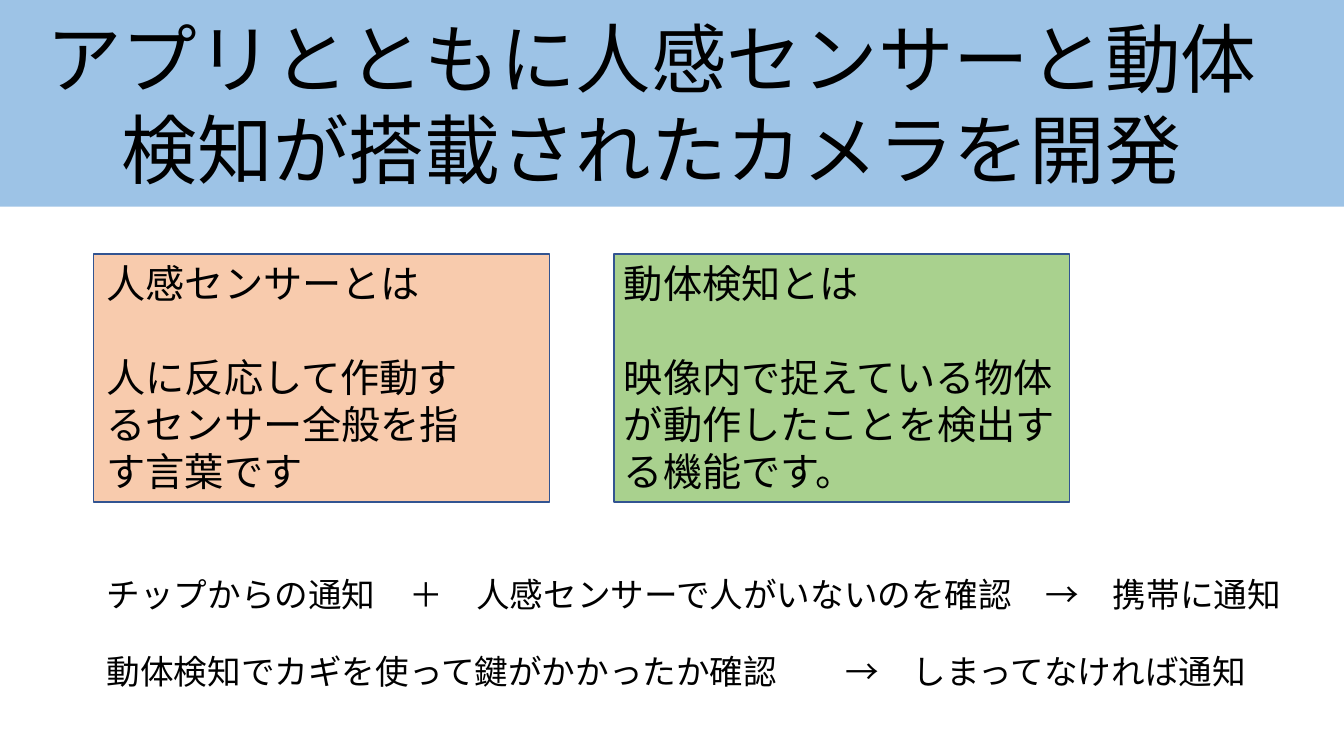
from dataclasses import dataclass

from lxml import etree
from pptx import Presentation
from pptx.dml.color import RGBColor
from pptx.enum.shapes import MSO_SHAPE
from pptx.enum.text import MSO_ANCHOR, MSO_AUTO_SIZE, PP_ALIGN
from pptx.oxml.ns import qn
from pptx.util import Inches, Pt

RECTANGLE = MSO_SHAPE.RECTANGLE
TOP = MSO_ANCHOR.TOP
LEFT = PP_ALIGN.LEFT
NO_AUTOFIT = MSO_AUTO_SIZE.NONE
FONT = "Noto Sans CJK JP"
LINE_RATIO = 1.2
CARD_TOP, CARD_WIDTH, CARD_HEIGHT = 2.52, 4.52, 2.46


@dataclass(frozen=True)
class Card:
    left: float
    text_left: float
    text_width: float
    fill: str
    heading: str
    description: str


@dataclass(frozen=True)
class Flow:
    top: float
    width: float
    text: str


CARDS = [
    Card(6.09, 6.09, 4.52, "A9D18E", "動体検知とは",
         "映像内で捉えている物体が動作したことを検出する機能です。"),
    Card(0.93, 0.96, 3.77, "F8CBAD", "人感センサーとは",
         "人に反応して作動するセンサー全般を指す言葉です"),
]
FLOWS = [
    Flow(5.64, 12.37, "チップからの通知　＋　人感センサーで人がいないのを確認　→　携帯に通知"),
    Flow(6.41, 12.06, "動体検知でカギを使って鍵がかかったか確認\t→　しまってなければ通知"),
]


def color(value: str) -> RGBColor:
    return RGBColor.from_string(value)


def place(shape, left: float, top: float, width: float, height: float) -> None:
    shape.left, shape.top = Inches(left), Inches(top)
    shape.width, shape.height = Inches(width), Inches(height)


def write(shape, texts: list[str], *, size: float, gap: float = 0,
          last_indent: float = 0, tab: float = 0) -> None:
    frame = shape.text_frame
    frame.word_wrap = True
    frame.auto_size = NO_AUTOFIT
    frame.vertical_anchor = TOP
    for index, text in enumerate(texts):
        para = frame.add_paragraph() if index else frame.paragraphs[0]
        properties = para._p.get_or_add_pPr()
        if tab:
            tabs = etree.SubElement(properties, qn("a:tabLst"))
            etree.SubElement(tabs, qn("a:tab"), pos=str(Inches(tab)), algn="l")
        if index:
            properties.set("marL", str(Inches(last_indent)))
            para.space_before = Pt(gap)
        para.alignment = LEFT
        para.line_spacing = Pt(size * LINE_RATIO)
        span = para.add_run()
        span.text = text
        span.font.size = Pt(size)
        span.font.name = FONT
        span.font.color.rgb = color("000000")
        east_asian = etree.SubElement(span.font._element, qn("a:ea"))
        east_asian.set("typeface", FONT)


def add_rectangle(shapes, left: float, top: float, width: float, height: float,
                  fill: str, line: str = ""):
    box = shapes.add_shape(RECTANGLE, Inches(left), Inches(top),
                           Inches(width), Inches(height))
    box.shadow.inherit = False
    box.fill.solid()
    box.fill.fore_color.rgb = color(fill)
    if line:
        box.line.color.rgb = color(line)
        box.line.width = Pt(1)
    else:
        box.line.fill.background()
    return box


def add_text(shapes, left: float, top: float, width: float, height: float,
             texts: list[str], *, size: float, gap: float = 0, tab: float = 0) -> None:
    box = shapes.add_textbox(Inches(left), Inches(top), Inches(width), Inches(height))
    write(box, texts, size=size, gap=gap, tab=tab)


def add_card(page, card: Card) -> None:
    shapes = page.shapes.add_group_shape().shapes
    add_rectangle(shapes, card.left, CARD_TOP, CARD_WIDTH, CARD_HEIGHT,
                  card.fill, "325491")
    add_text(shapes, card.text_left, CARD_TOP, card.text_width, CARD_HEIGHT,
             [card.heading, card.description], size=28, gap=28 * LINE_RATIO)


def main() -> None:
    deck = Presentation()
    deck.slide_width, deck.slide_height = Inches(13.33), Inches(7.5)
    page = deck.slides.add_slide(deck.slide_layouts[5])
    banner = add_rectangle(page.shapes, 0, 0, 13.33, 2.05, "9DC3E6")
    title = page.shapes.title
    banner._element.addnext(title._element)
    place(title, 0.36, 0.07, 12.97, 1.98)
    write(title, ["アプリとともに人感センサーと動体", "検知が搭載されたカメラを開発"],
          size=54, last_indent=0.75)
    for card in CARDS:
        add_card(page, card)
    for flow in FLOWS:
        add_text(page.shapes, 0.96, flow.top, flow.width, 0.5, [flow.text],
                 size=24, tab=7.33 if "\t" in flow.text else 0)
    deck.save("out.pptx")


if __name__ == "__main__":
    main()
